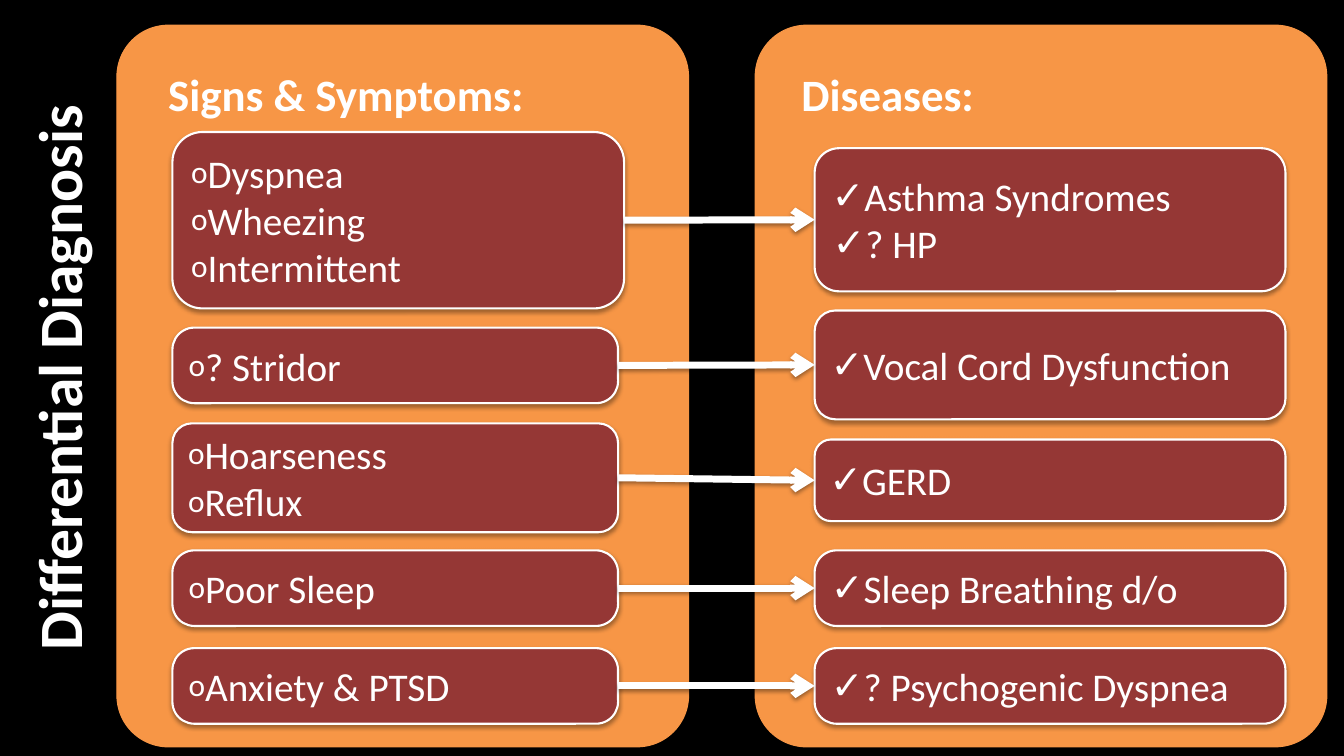
"""Build the differential diagnosis slide pairing symptoms with diseases."""
from lxml.etree import SubElement
from pptx import Presentation
from pptx.dml.color import RGBColor
from pptx.enum.shapes import MSO_CONNECTOR, MSO_SHAPE
from pptx.enum.text import MSO_ANCHOR, PP_ALIGN
from pptx.oxml.ns import qn
from pptx.util import Inches, Pt

BLACK, WHITE, ORANGE, MAROON = "000000", "FFFFFF", "F79646", "953735"
LEFT_SIDE, RIGHT_SIDE = 3, 1
CIRCLE, CHECK = ("o", 80), ("✓", 100)


def color(value):
    """Turn a hex string into a colour."""
    return RGBColor.from_string(value)


def add_element(parent, tag, **values):
    """Append a drawing element with the given attributes."""
    return SubElement(parent, qn(tag), {key: str(value) for key, value in values.items()})


class DiagnosisSlide:
    """Hold the text style and the current slide."""

    def __init__(self, deck):
        """Add a page with a black background."""
        self.page = deck.slides.add_slide(deck.slide_layouts[5])
        fill = self.page.background.fill
        fill.solid()
        fill.fore_color.rgb = color(BLACK)

    def style(self, para, size, bold=False):
        """Apply the white Calibri style to a paragraph."""
        formats = {"name": "Calibri", "size": Pt(size), "bold": bold}
        for name, value in formats.items():
            setattr(para.font, name, value)
        para.font.color.rgb = color(WHITE)

    def shadow(self, shape, distance, opacity):
        """Give a shape a soft shadow straight below it."""
        effects = add_element(shape._element.spPr, "a:effectLst")
        outer = add_element(effects, "a:outerShdw", blurRad=Pt(3.1), dist=Pt(distance),
                            dir=5400000, rotWithShape=0)
        tone = add_element(outer, "a:srgbClr", val=BLACK)
        add_element(tone, "a:alpha", val=opacity * 1000)

    def title(self, text):
        """Place the title upright along the left edge."""
        box = self.page.shapes.title
        places = {"left": -3.18, "top": 3.29, "width": 7.5, "height": 0.92}
        for name, value in places.items():
            setattr(box, name, Inches(value))
        box.rotation = 270
        frame = box.text_frame
        frame.text = text
        frame.vertical_anchor = MSO_ANCHOR.MIDDLE
        para = frame.paragraphs[0]
        para.alignment = PP_ALIGN.CENTER
        self.style(para, 44, True)

    def rounded(self, shapes, place, corner, fill, line, weight):
        """Add a rounded rectangle with a shadow."""
        box = shapes.add_shape(MSO_SHAPE.ROUNDED_RECTANGLE, *map(Inches, place))
        box.adjustments[0] = corner
        box.fill.solid()
        box.fill.fore_color.rgb = color(fill)
        box.line.color.rgb = color(line)
        box.line.width = Pt(weight)
        self.shadow(box, 1.8, 35)
        box.text_frame.word_wrap = True
        return box

    def panel(self, left, heading, margin):
        """Add an orange column with its heading."""
        box = self.rounded(self.page.shapes, (left, 0.25, 5.67, 7.16), 0.09, ORANGE, ORANGE, 0.75)
        frame = box.text_frame
        formats = {"vertical_anchor": MSO_ANCHOR.TOP, "margin_left": Inches(margin),
                   "margin_top": Inches(0.26)}
        for name, value in formats.items():
            setattr(frame, name, value)
        para = frame.paragraphs[0]
        para.text = heading
        para.alignment = PP_ALIGN.LEFT
        self.style(para, 32, True)

    def card(self, shapes, place, corner, items, bullet):
        """Add a maroon card with a bulleted list."""
        box = self.rounded(shapes, place, corner, MAROON, WHITE, 1.5)
        frame = box.text_frame
        frame.vertical_anchor = MSO_ANCHOR.MIDDLE
        mark, percent = bullet
        for index, item in enumerate(items):
            para = frame.add_paragraph() if index else frame.paragraphs[0]
            para.text = item
            para.level = 1
            para.alignment = PP_ALIGN.LEFT
            settings = para._p.get_or_add_pPr()
            indent = 0.31 if item == "? HP" else 0.1
            settings.set("marL", str(Inches(indent)))
            settings.set("indent", str(Inches(-0.3)))
            add_element(settings, "a:buSzPct", val=percent * 1000)
            add_element(settings, "a:buFont", typeface="Calibri")
            add_element(settings, "a:buChar", char=mark)
            self.style(para, 28)
        return box

    def arrow(self, shapes, start, end):
        """Join two cards with a white arrow."""
        line = shapes.add_connector(MSO_CONNECTOR.STRAIGHT, 0, 0, 0, 0)
        line.begin_connect(start, LEFT_SIDE)
        line.end_connect(end, RIGHT_SIDE)
        line.line.color.rgb = color(WHITE)
        line.line.width = Pt(5)
        add_element(line.line._get_or_add_ln(), "a:tailEnd", type="arrow")
        self.shadow(line, 1.6, 38)

    def pair(self, symptoms, symptom_box, diseases, disease_box):
        """Group a symptom card, a disease card and their arrow."""
        shapes = self.page.shapes.add_group_shape().shapes
        top, width, height, corner = symptom_box
        start = self.card(shapes, (1.71, top, width, height), corner, symptoms, CIRCLE)
        top, height, corner = disease_box
        end = self.card(shapes, (8.08, top, 4.67, height), corner, diseases, CHECK)
        self.arrow(shapes, start, end)


PAIRS = [
    (["Dyspnea", "Wheezing", "Intermittent"], (1.31, 4.48, 1.75, 0.17),
     ["Asthma Syndromes", "? HP"], (1.47, 1.42, 0.17)),
    (["? Stridor"], (3.25, 4.42, 0.75, 0.29), ["Vocal Cord Dysfunction"], (3.08, 1.08, 0.19)),
    (["Hoarseness", "Reflux"], (4.2, 4.42, 1.08, 0.18), ["GERD"], (4.36, 0.81, 0.2)),
    (["Poor Sleep"], (5.46, 4.42, 0.75, 0.29), ["Sleep Breathing d/o"], (5.46, 0.75, 0.29)),
    (["Anxiety & PTSD"], (6.43, 4.42, 0.75, 0.29), ["? Psychogenic Dyspnea"], (6.43, 0.75, 0.29)),
]


def main():
    """Build and save the deck."""
    deck = Presentation()
    deck.slide_width, deck.slide_height = Inches(13.33), Inches(7.5)
    slide = DiagnosisSlide(deck)
    slide.title("Differential Diagnosis")
    slide.panel(1.16, "Signs & Symptoms:", 0.36)
    slide.panel(7.49, "Diseases:", 0.31)
    for pair in PAIRS:
        slide.pair(*pair)
    deck.save("out.pptx")


if __name__ == "__main__":
    main()
